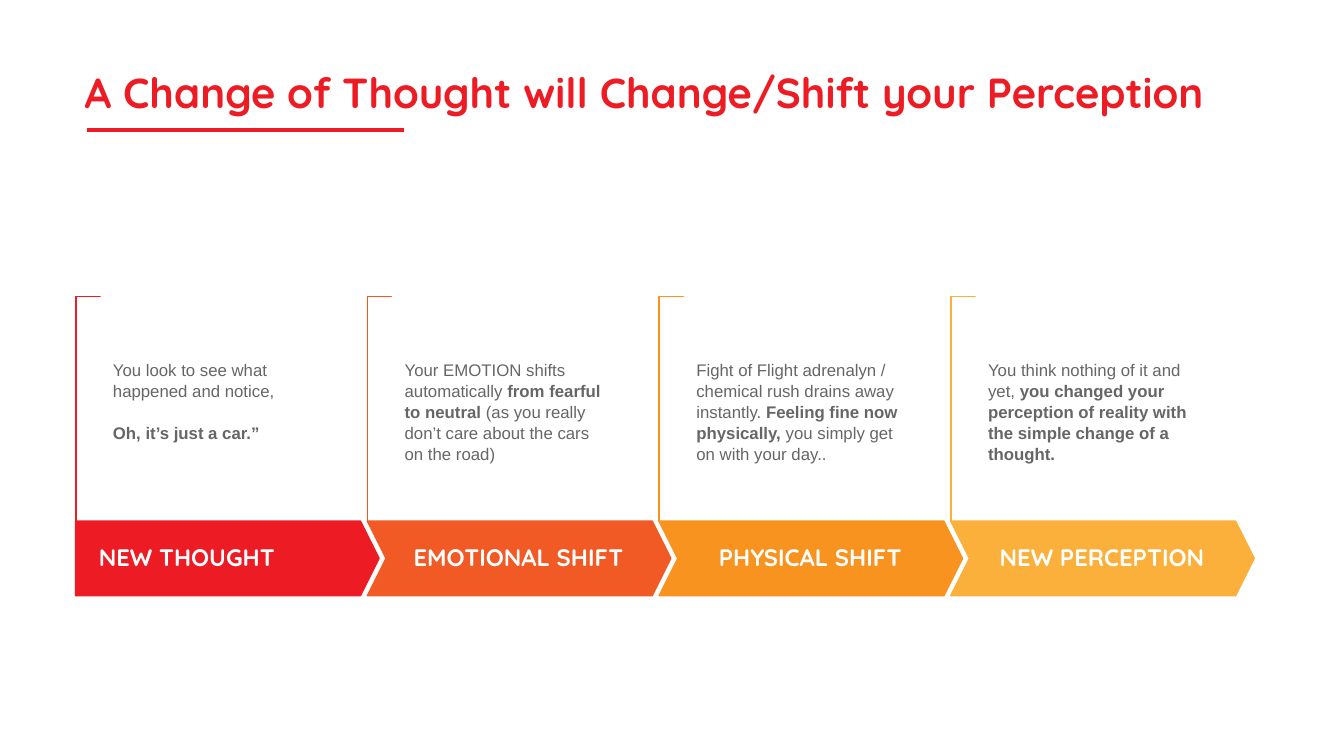
from pptx import Presentation
from pptx import util as u
from pptx.dml.color import RGBColor
from pptx.enum import shapes, text

RED, GREY, WHITE = "ED1C24", "666666", "FFFFFF"
STEPS = [
    ("NEW THOUGHT", RED, [
        [("You look to see what happened and notice,", False)],
        [("Oh, it’s just a car.”", True)]]),
    ("EMOTIONAL SHIFT", "F15A24", [
        [("Your EMOTION shifts automatically ", False),
         ("from fearful to neutral ", True),
         ("(as you really don’t care about the cars on the road)", False)]]),
    ("PHYSICAL SHIFT", "F7931E", [
        [("Fight of Flight adrenalyn / chemical rush drains away instantly. ", False),
         ("Feeling fine now physically, ", True),
         ("you simply get on with your day..", False)]]),
    ("NEW PERCEPTION", "FBB03B", [
        [("You think nothing of it and yet, ", False),
         ("you changed your perception of reality with the simple change of a thought.", True)]]),
]


def rgb(color):
    return RGBColor.from_string(color)


def add_text(s, x, y, w, h, paragraphs, font, size, color, spacing,
             margins=(0.1, 0.05, 0.1, 0.05), anchor=text.MSO_ANCHOR.MIDDLE,
             align=text.PP_ALIGN.LEFT, gap=0):
    tf = s.shapes.add_textbox(u.Inches(x), u.Inches(y), u.Inches(w), u.Inches(h)).text_frame
    tf.word_wrap = True
    tf.vertical_anchor = anchor
    tf.margin_left, tf.margin_top, tf.margin_right, tf.margin_bottom = map(u.Inches, margins)
    for i, runs in enumerate(paragraphs):
        p = tf.add_paragraph() if i else tf.paragraphs[0]
        p.alignment = align
        p.line_spacing = spacing
        if i:
            p.space_before = u.Pt(gap)
        for words, bold in runs:
            r = p.add_run()
            r.text = words
            r.font.name = font
            r.font.size = u.Pt(size)
            r.font.bold = bold
            r.font.color.rgb = rgb(color)


def add_outline(s, kind, x, y, w, h, fill, line, adjustments):
    sp = s.shapes.add_shape(kind, u.Inches(x), u.Inches(y), u.Inches(w), u.Inches(h))
    sp.shadow.inherit = False
    sp.fill.solid()
    sp.fill.fore_color.rgb = rgb(fill)
    sp.line.color.rgb = rgb(line)
    sp.line.width = u.Pt(1)
    for i, value in enumerate(adjustments):
        sp.adjustments[i] = value
    return sp


def add_title(s, x, y, w, h):
    rule_x, rule_y = x + 0.12, y + 1.07
    rule = s.shapes.add_connector(shapes.MSO_CONNECTOR.STRAIGHT, u.Inches(rule_x), u.Inches(rule_y),
                                  u.Inches(rule_x + 3.15), u.Inches(rule_y))
    rule.line.color.rgb = rgb(RED)
    rule.line.width = u.Pt(3)
    sp_pr = rule._element.spPr
    sp_pr.append(sp_pr.makeelement("{http://schemas.openxmlformats.org/drawingml/2006/main}effectLst", {}))
    add_text(s, x, y, w, h, [[("A Change of Thought will Change/Shift your Perception", True)]],
             "Quicksand", 30, RED, 0.9)


def add_step(s, x, y, w, h, step, first):
    label, color, body = step
    bar_h, tick = 0.74, 0.24
    stem = h - bar_h
    bar_y = y + stem
    bracket = add_outline(s, shapes.MSO_SHAPE.CORNER, x + (tick - stem) / 2, y + (stem - tick) / 2,
                          stem, tick, WHITE, color, (0.01, 0.01))
    bracket.rotation = 90
    kind = shapes.MSO_SHAPE.PENTAGON if first else shapes.MSO_SHAPE.CHEVRON
    add_outline(s, kind, x, bar_y, w, bar_h, color, color, (0.25,))
    label_x = x if first else x + 0.18
    left = 0.23 if first else 0.12
    align = text.PP_ALIGN.LEFT if first else text.PP_ALIGN.CENTER
    add_text(s, label_x, bar_y, 2.64, bar_h, [[(label, True)]], "Quicksand", 17, WHITE, 0.9,
             (left, 0.24, 0.12, 0.24), align=align)
    add_text(s, x + 0.25, y + 0.15, 2.45, 1.52, body, "Arial", 12, GREY, u.Pt(15),
             (0.12, 0.47, 0.31, 0), text.MSO_ANCHOR.TOP, gap=15)


def add_process(s, x, y, w, h):
    step_w = 3.01
    pitch = (w - step_w) / (len(STEPS) - 1)
    for i, step in enumerate(STEPS):
        add_step(s, x + i * pitch, y, step_w, h, step, i == 0)


def main():
    prs = Presentation()
    prs.slide_width, prs.slide_height = u.Inches(13.33), u.Inches(7.5)
    s = prs.slides.add_slide(prs.slide_layouts[6])
    add_title(s, 0.74, 0.22, 11.71, 1.45)
    add_process(s, 0.75, 2.94, 11.69, 2.97)
    prs.save("out.pptx")


if __name__ == "__main__":
    main()
